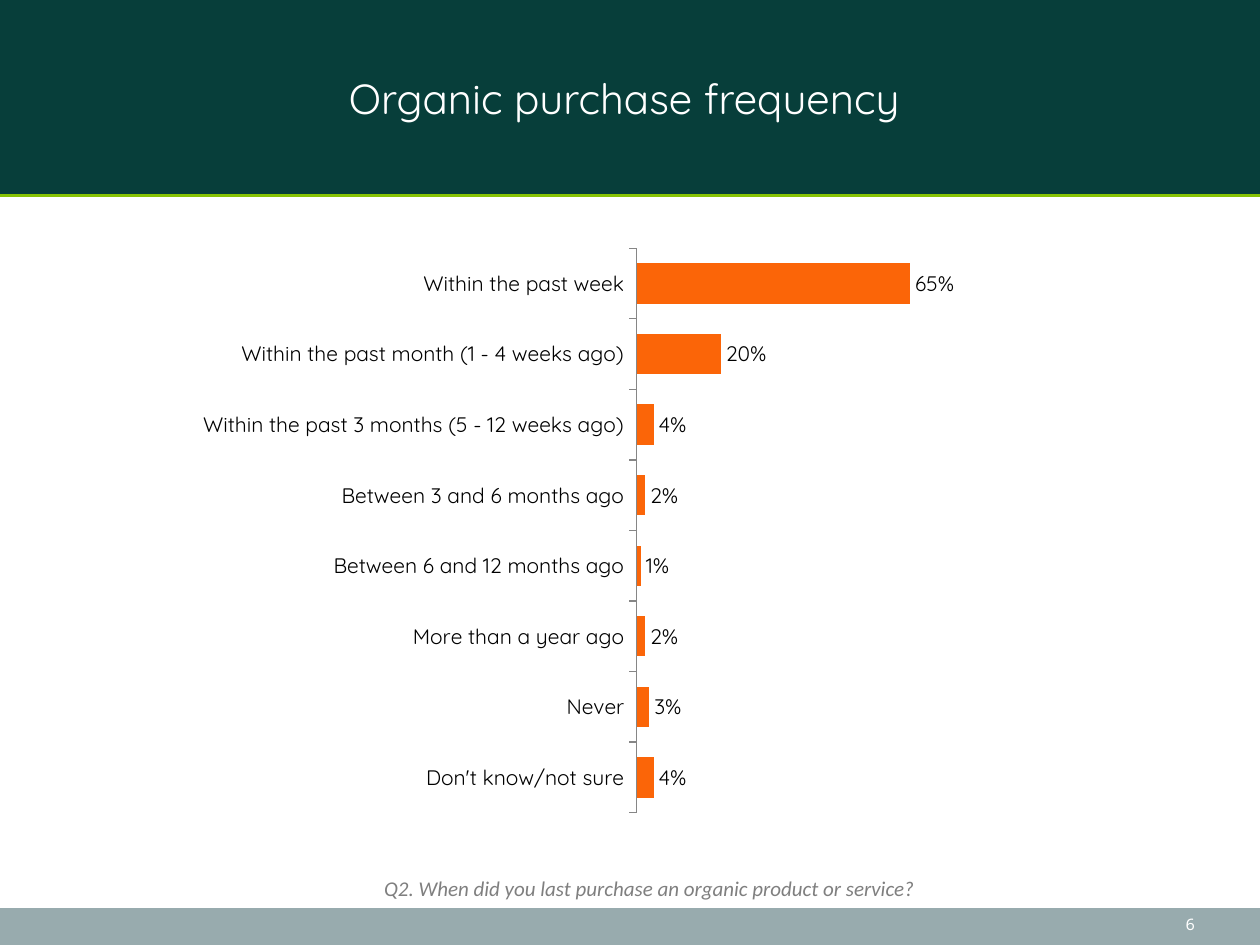
from lxml import etree
from pptx import Presentation
from pptx.chart.data import CategoryChartData
from pptx.dml.color import RGBColor
from pptx.enum.chart import XL_CHART_TYPE, XL_LABEL_POSITION, XL_TICK_LABEL_POSITION, XL_TICK_MARK
from pptx.enum.shapes import MSO_CONNECTOR, MSO_SHAPE
from pptx.enum.text import MSO_ANCHOR, PP_ALIGN
from pptx.oxml.ns import qn
from pptx.util import Cm, Pt

BAR = XL_CHART_TYPE.BAR_CLUSTERED
OUTSIDE_END = XL_LABEL_POSITION.OUTSIDE_END
LOW = XL_TICK_LABEL_POSITION.LOW
TICK_OUT, TICK_NONE = XL_TICK_MARK.OUTSIDE, XL_TICK_MARK.NONE
RECT, STRAIGHT = MSO_SHAPE.RECTANGLE, MSO_CONNECTOR.STRAIGHT
TOP, MIDDLE = MSO_ANCHOR.TOP, MSO_ANCHOR.MIDDLE
CENTER, RIGHT = PP_ALIGN.CENTER, PP_ALIGN.RIGHT


class Theme:
    header = RGBColor(0x07, 0x3E, 0x3A)
    footer = RGBColor(0x98, 0xAB, 0xAE)
    rule = RGBColor(0x87, 0xC2, 0x05)
    bar = RGBColor(0xFB, 0x65, 0x08)
    axis = RGBColor(0x86, 0x86, 0x86)
    white = RGBColor(0xFF, 0xFF, 0xFF)
    black = RGBColor(0, 0, 0)
    note = RGBColor(0x7F, 0x7F, 0x7F)
    main_font, note_font, number_font = "Quicksand", "Calibri", "Noto Sans Mono"
    title_size, body_size, number_size = Pt(24), Pt(12), Pt(9)


def add_text(box, text, font, size, color, align, anchor=TOP, italic=False):
    sp = s.shapes.add_textbox(*map(Cm, box))
    tf = sp.text_frame
    tf.word_wrap = True
    tf.vertical_anchor = anchor
    p = tf.paragraphs[0]
    p.text = text
    p.alignment = align
    p.font.name, p.font.size, p.font.italic = font, size, italic
    p.font.color.rgb = color


prs = Presentation()
prs.slide_width, prs.slide_height = Cm(25.4), Cm(19.05)
s = prs.slides.add_slide(prs.slide_layouts[6])

# Footer and header bands
for top, height, color in ((18.31, 0.74, Theme.footer), (0, 3.94, Theme.header)):
    sp = s.shapes.add_shape(RECT, 0, Cm(top), prs.slide_width, Cm(height))
    sp.shadow.inherit = False
    sp.fill.solid()
    sp.fill.fore_color.rgb = color
    sp.line.fill.background()

# Rule under the header
rule = s.shapes.add_connector(STRAIGHT, 0, Cm(3.94), prs.slide_width, Cm(3.94))
rule.line.color.rgb = Theme.rule
rule.line.width = Pt(2)
etree.SubElement(rule._element.spPr, qn("a:effectLst"))

# Page number and title
add_text((18.42, 18.31, 5.92, 0.74), "6", Theme.number_font, Theme.number_size,
         Theme.white, RIGHT)
add_text((1.27, 0, 22.86, 3.94), "Organic purchase frequency ", Theme.main_font,
         Theme.title_size, Theme.white, CENTER, MIDDLE)

# Bar chart
answers = {
    "Within the past week": 0.65,
    "Within the past month (1 - 4 weeks ago)": 0.2,
    "Within the past 3 months (5 - 12 weeks ago)": 0.04,
    "Between 3 and 6 months ago": 0.02,
    "Between 6 and 12 months ago": 0.01,
    "More than a year ago": 0.02,
    "Never": 0.03,
    "Don't know/not sure": 0.04,
}
data = CategoryChartData(number_format="0%")
data.categories = list(answers)
data.add_series("Series 1", list(answers.values()))
chart = s.shapes.add_chart(BAR, Cm(1.75), Cm(4.09), Cm(21.74), Cm(13.08), data).chart
chart.has_legend = False
chart.has_title = False
chart.font.name, chart.font.size = Theme.main_font, Theme.body_size
chart.font.color.rgb = Theme.black

cat = chart.category_axis
cat.reverse_order = True
cat.has_major_gridlines = False
cat.major_tick_mark, cat.minor_tick_mark = TICK_OUT, TICK_NONE
cat.tick_label_position = LOW
cat.format.line.color.rgb = Theme.axis
cat.format.line.width = Pt(0.75)

val = chart.value_axis
val.minimum_scale, val.maximum_scale, val.major_unit = 0, 1, 0.2
val.has_major_gridlines = False
val.visible = False

plot = chart.plots[0]
plot.gap_width = 75
plot.vary_by_categories = False
fill = plot.series[0].format.fill
fill.solid()
fill.fore_color.rgb = Theme.bar
plot.has_data_labels = True
labels = plot.data_labels
labels.show_value = True
labels.number_format, labels.number_format_is_linked = "0%", False
labels.position = OUTSIDE_END

# Fixed inner plot area, as fractions of the chart
plot_area = chart._chartSpace.chart.plotArea
for old in plot_area.findall(qn("c:layout")):
    plot_area.remove(old)
layout = etree.Element(qn("c:layout"))
plot_area.insert(0, layout)
manual = etree.SubElement(layout, qn("c:manualLayout"))
for tag, value in (("layoutTarget", "inner"), ("xMode", "edge"), ("yMode", "edge"),
                   ("x", 0.51), ("y", 0.07), ("w", 0.39), ("h", 0.87)):
    etree.SubElement(manual, qn("c:" + tag)).set("val", str(value))

# Survey question
add_text((3.02, 17.53, 20.24, 0.76),
         "Q2. When did you last purchase an organic product or service? ",
         Theme.note_font, Theme.body_size, Theme.note, CENTER, italic=True)

prs.save("out.pptx")
